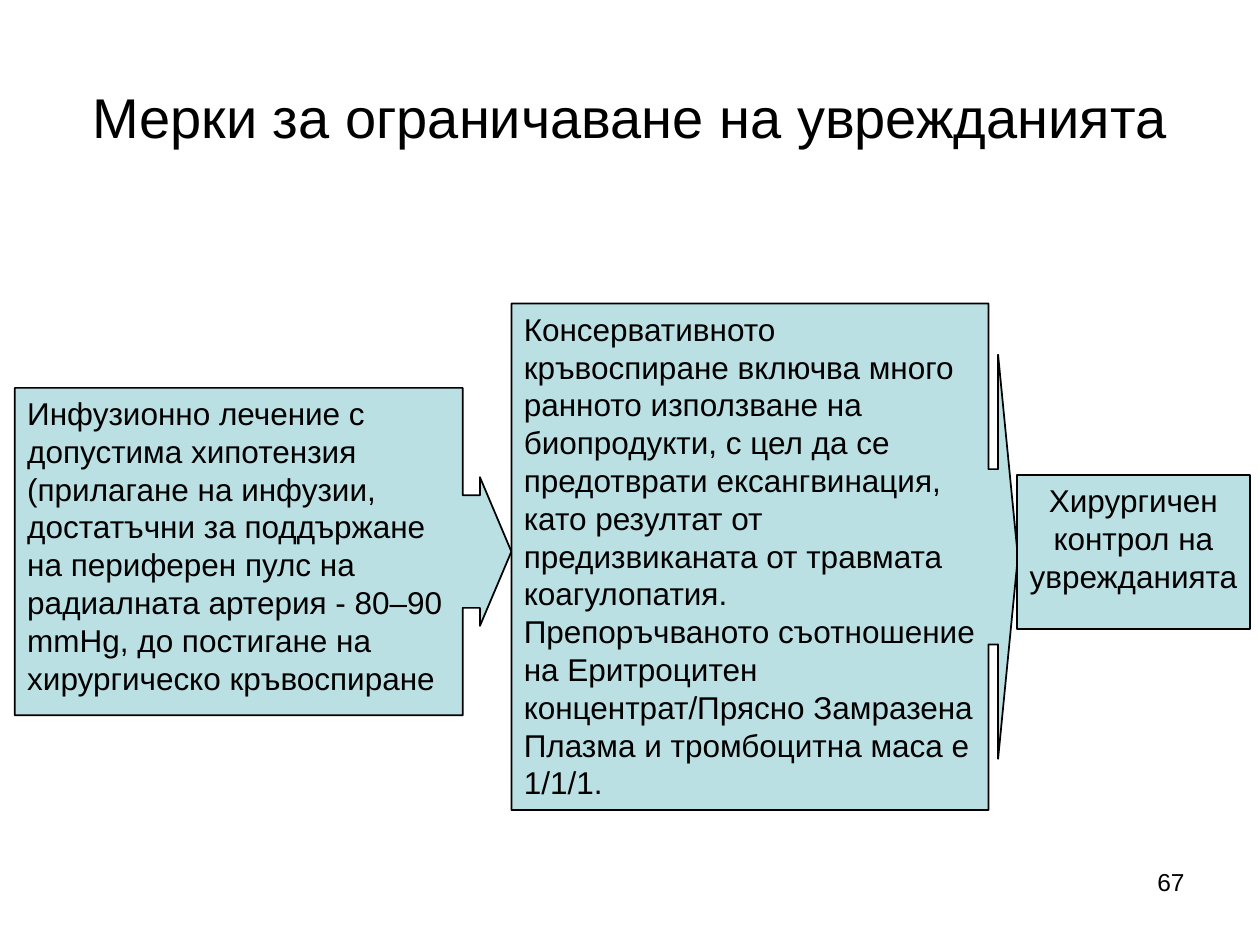
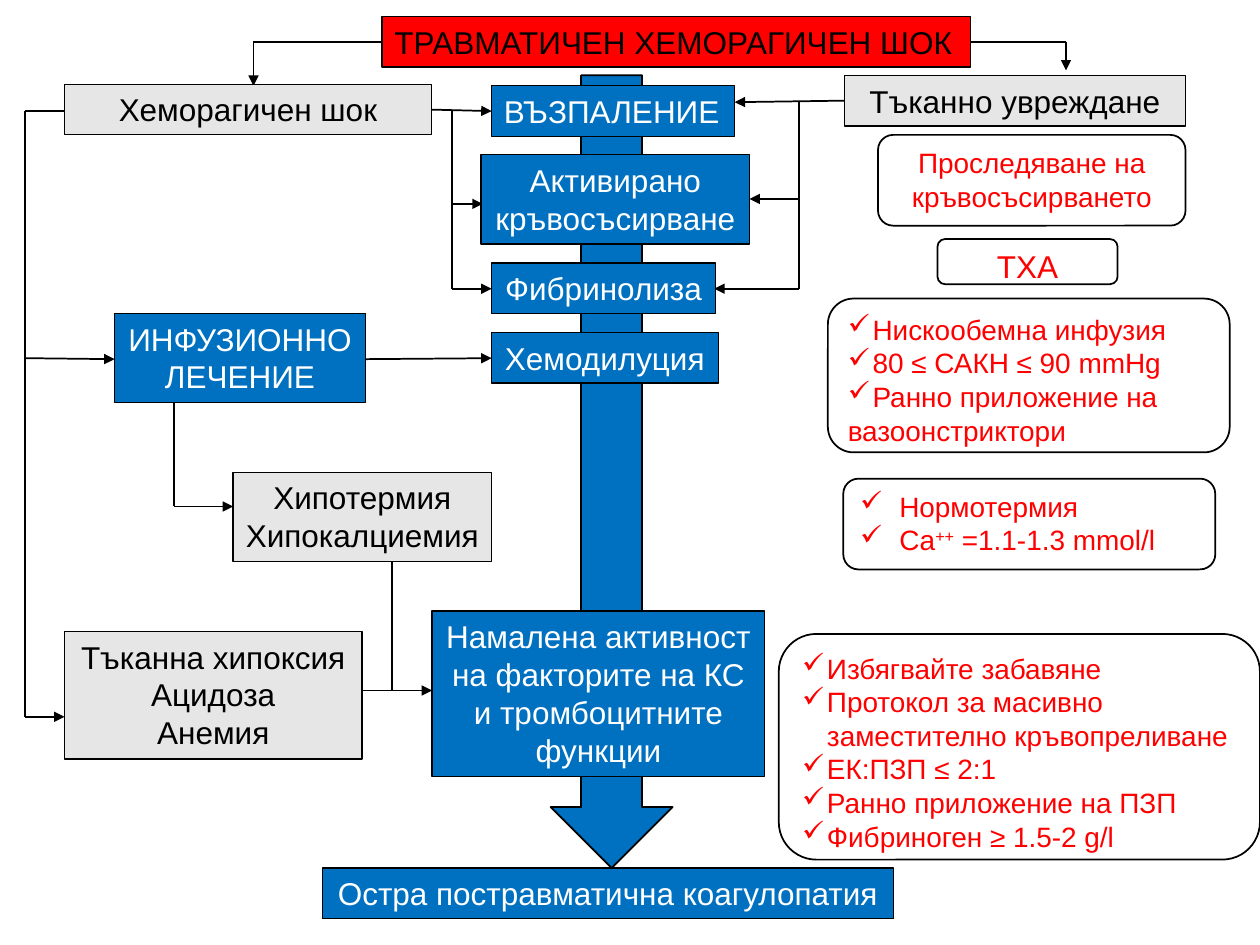
from itertools import pairwise

from lxml import etree
from pptx import Presentation
from pptx.dml.color import RGBColor
from pptx.enum.shapes import MSO_CONNECTOR, MSO_SHAPE
from pptx.enum.text import MSO_ANCHOR, PP_ALIGN
from pptx.oxml.ns import qn
from pptx.util import Cm, Pt

LEFT, CENTER, RIGHT = PP_ALIGN.LEFT, PP_ALIGN.CENTER, PP_ALIGN.RIGHT
TOP, MIDDLE = MSO_ANCHOR.TOP, MSO_ANCHOR.MIDDLE
RECTANGLE, ROUNDED = MSO_SHAPE.RECTANGLE, MSO_SHAPE.ROUNDED_RECTANGLE
CALLOUT, DOWN_ARROW = MSO_SHAPE.RIGHT_ARROW_CALLOUT, MSO_SHAPE.DOWN_ARROW
STRAIGHT = MSO_CONNECTOR.STRAIGHT

FONT = "Arial"
COLORS = {
    "black": "000000",
    "white": "FFFFFF",
    "red": "FF0000",
    "blue": "0070C0",
    "gray": "E6E6E6",
    "aqua": "BBE0E3",
}


def color(name):
    return RGBColor.from_string(COLORS[name])


class SlideBuilder:
    """Holds the deck, the shared style and the current slide."""

    def __init__(self):
        self.deck = Presentation()
        self.deck.slide_width, self.deck.slide_height = Cm(25.4), Cm(19.05)
        self.page = None

    def new_page(self):
        self.page = self.deck.slides.add_slide(self.deck.slide_layouts[6])

    def fill_frame(self, frame, lines, size, ink, align, bullet_indent=None):
        """Fill a frame with one paragraph a line; ^...^ marks superscript.

        With a bullet indent, lines get check marks, except those starting with "|".
        """
        for index, line in enumerate(lines):
            para = frame.paragraphs[0] if index == 0 else frame.add_paragraph()
            para.alignment = align
            if bullet_indent and not line.startswith("|"):
                self.add_check_mark(para, bullet_indent)
            para.font.name, para.font.size = FONT, Pt(size)
            para.font.color.rgb = color(ink)
            for part, words in enumerate(line.lstrip("|").split("^")):
                span = para.add_run()
                span.text = words
                if part % 2:
                    span._r.get_or_add_rPr().set("baseline", "30000")

    def add_check_mark(self, para, indent):
        properties = para._p.get_or_add_pPr()
        properties.set("marL", str(Cm(indent)))
        properties.set("indent", str(-Cm(indent)))
        etree.SubElement(properties, qn("a:buChar")).set("char", "✓")

    def text(self, at, words, size, align, anchor=TOP):
        frame = self.page.shapes.add_textbox(*map(Cm, at)).text_frame
        frame.word_wrap = True
        frame.vertical_anchor = anchor
        self.fill_frame(frame, [words], size, "black", align)

    def shape(self, kind, at, fill, line_width=1, adjustments=()):
        shape = self.page.shapes.add_shape(kind, *map(Cm, at))
        shape.shadow.inherit = False
        shape.fill.solid()
        shape.fill.fore_color.rgb = color(fill)
        shape.line.color.rgb = color("black")
        shape.line.width = Pt(line_width)
        for index, value in enumerate(adjustments):
            shape.adjustments[index] = value
        shape.text_frame.vertical_anchor = TOP
        return shape

    def callout(self, at, adjustments, words, align=LEFT):
        frame = self.shape(CALLOUT, at, "aqua", adjustments=adjustments).text_frame
        frame.word_wrap = True
        self.fill_frame(frame, [words], 18, "black", align)

    def box(self, at, fill, *lines, align=CENTER):
        frame = self.shape(RECTANGLE, at, fill, 0.75).text_frame
        frame.word_wrap = align == LEFT
        self.fill_frame(frame, lines, 18, "white" if fill == "blue" else "black", align)

    def measure(self, at, *lines, size=16, bullet_indent=None):
        """Rounded frame with a treatment measure in red."""
        frame = self.shape(ROUNDED, at, "white").text_frame
        frame.word_wrap = True
        align = LEFT if bullet_indent else CENTER
        self.fill_frame(frame, lines, size, "red", align, bullet_indent)

    def link(self, *points, arrow=True):
        """Straight lines from point to point, the last one with an arrowhead."""
        for start, end in pairwise(points):
            line = self.page.shapes.add_connector(STRAIGHT, *map(Cm, start + end))
            line.line.color.rgb = color("black")
            line.line.width = Pt(1)
            etree.SubElement(line._element.spPr, qn("a:effectLst"))
        if arrow:
            tip = etree.SubElement(line.line._get_or_add_ln(), qn("a:tailEnd"))
            tip.set("type", "triangle")


def build_damage_control(builder):
    builder.new_page()
    builder.text((18.21, 17.35, 5.92, 1.32), "67", 14, RIGHT)
    builder.callout(
        (0.3, 7.82, 10.01, 6.6), (0.344, 0.227, 0.096, 0.902),
        "Инфузионно лечение с допустима хипотензия (прилагане на инфузии, "
        "достатъчни за поддържане на периферен пулс на радиалната артерия - "
        "80–90 mmHg, до постигане на хирургическо кръвоспиране")
    builder.callout(
        (10.31, 6.12, 10.21, 10.21), (0.346, 0.399, 0.039, 0.942),
        "Консервативното кръвоспиране включва много ранното използване на "
        "биопродукти, с цел да се предотврати ексангвинация, като резултат от "
        "предизвиканата от травмата коагулопатия. Препоръчваното съотношение на "
        "Еритроцитен концентрат/Прясно Замразена Плазма и тромбоцитна маса е 1/1/1.")
    builder.callout((20.5, 9.58, 4.7, 3.1), (0.25, 0.192, 0, 1),
                    "Хирургичен контрол на уврежданията", CENTER)
    builder.text((1.27, 0.76, 22.86, 3.18),
                 "Мерки за ограничаване на уврежданията", 32, CENTER, MIDDLE)


def build_shock_diagram(builder):
    builder.new_page()
    builder.shape(DOWN_ARROW, (11.1, 1.52, 2.46, 15.98), "blue")

    # Shock splits into hemorrhage and tissue damage
    builder.link((19.25, 0.84), (21.49, 0.84), (21.49, 1.42))
    builder.link((7.7, 0.84), (5.11, 0.84), (5.11, 1.73))

    # Hemorrhage leads to infusion and hypoxia
    trunk = 0.5
    builder.link((1.3, 2.24), (trunk, 2.24), (trunk, 14.45), (1.3, 14.45))
    builder.link((trunk, 7.22), (2.31, 7.24))
    builder.link((7.37, 7.24), (9.91, 7.22))
    builder.link((3.51, 8.13), (3.51, 10.21), (4.7, 10.21))
    builder.link((7.9, 10.13), (7.9, 13.92), arrow=False)
    builder.link((7.29, 13.92), (8.71, 13.92))

    # Both sides feed the central column
    left_branch, right_branch = 9.12, 16.1
    builder.link((8.71, 2.21), (9.91, 2.24))
    builder.link((left_branch, 2.24), (left_branch, 5.82), (9.91, 5.82))
    builder.link((left_branch, 4.11), (9.73, 4.11))
    builder.link((17.02, 2.03), (14.81, 2.06))
    builder.link((right_branch, 2.03), (right_branch, 5.82), (14.4, 5.82))
    builder.link((right_branch, 4.01), (15.11, 4.01))

    builder.box((7.7, 0.33, 11.86, 1.02), "red", "ТРАВМАТИЧЕН ХЕМОРАГИЧЕН ШОК", align=LEFT)
    builder.box((1.3, 1.7, 7.4, 1.02), "gray", "Хеморагичен шок")
    builder.box((17.02, 1.52, 6.88, 1.02), "gray", "Тъканно увреждане")
    builder.box((2.31, 6.32, 5.06, 1.8), "blue", "ИНФУЗИОННО", "ЛЕЧЕНИЕ")
    builder.box((4.7, 9.52, 5.21, 1.8), "gray", "Хипотермия", "Хипокалциемия")
    builder.box((1.3, 12.73, 6, 2.57), "gray", "Тъканна хипоксия", "Ацидоза", "Анемия")
    builder.box((9.91, 1.73, 4.9, 1.02), "blue", "ВЪЗПАЛЕНИЕ", align=LEFT)
    builder.box((9.7, 3.12, 5.41, 1.8), "blue", "Активирано", "кръвосъсирване")
    builder.box((9.91, 5.3, 4.52, 1.02), "blue", "Фибринолиза")
    builder.box((9.91, 6.7, 4.57, 1.02), "blue", "Хемодилуция")
    builder.box((8.71, 12.32, 6.71, 3.33), "blue", "Намалена активност",
                "на факторите на КС", "и тромбоцитните", "функции")
    builder.box((6.5, 17.5, 11.51, 1.02), "blue", "Остра постравматична коагулопатия")

    builder.measure((17.7, 2.72, 6.2, 1.83), "Проследяване на кръвосъсирването")
    builder.measure((18.9, 4.82, 3.63, 0.91), "ТХА", size=18)
    builder.measure((16.69, 6.02, 8.1, 3.1), "Нискообемна инфузия", "80 ≤ САКН ≤ 90 mmHg",
                    "Ранно приложение на", "|вазоонстриктори", bullet_indent=0.5)
    builder.measure((17, 9.65, 7.5, 1.83), "Нормотермия", "Са^++^ =1.1-1.3 mmol/l",
                    bullet_indent=0.79)
    builder.measure((15.7, 12.78, 9.7, 4.55), "Избягвайте забавяне",
                    "Протокол за масивно заместително кръвопреливане", "ЕК:ПЗП ≤ 2:1",
                    "Ранно приложение на ПЗП", "Фибриноген ≥ 1.5-2 g/l", bullet_indent=0.5)


def main():
    builder = SlideBuilder()
    build_damage_control(builder)
    build_shock_diagram(builder)
    builder.deck.save("out.pptx")


if __name__ == "__main__":
    main()
